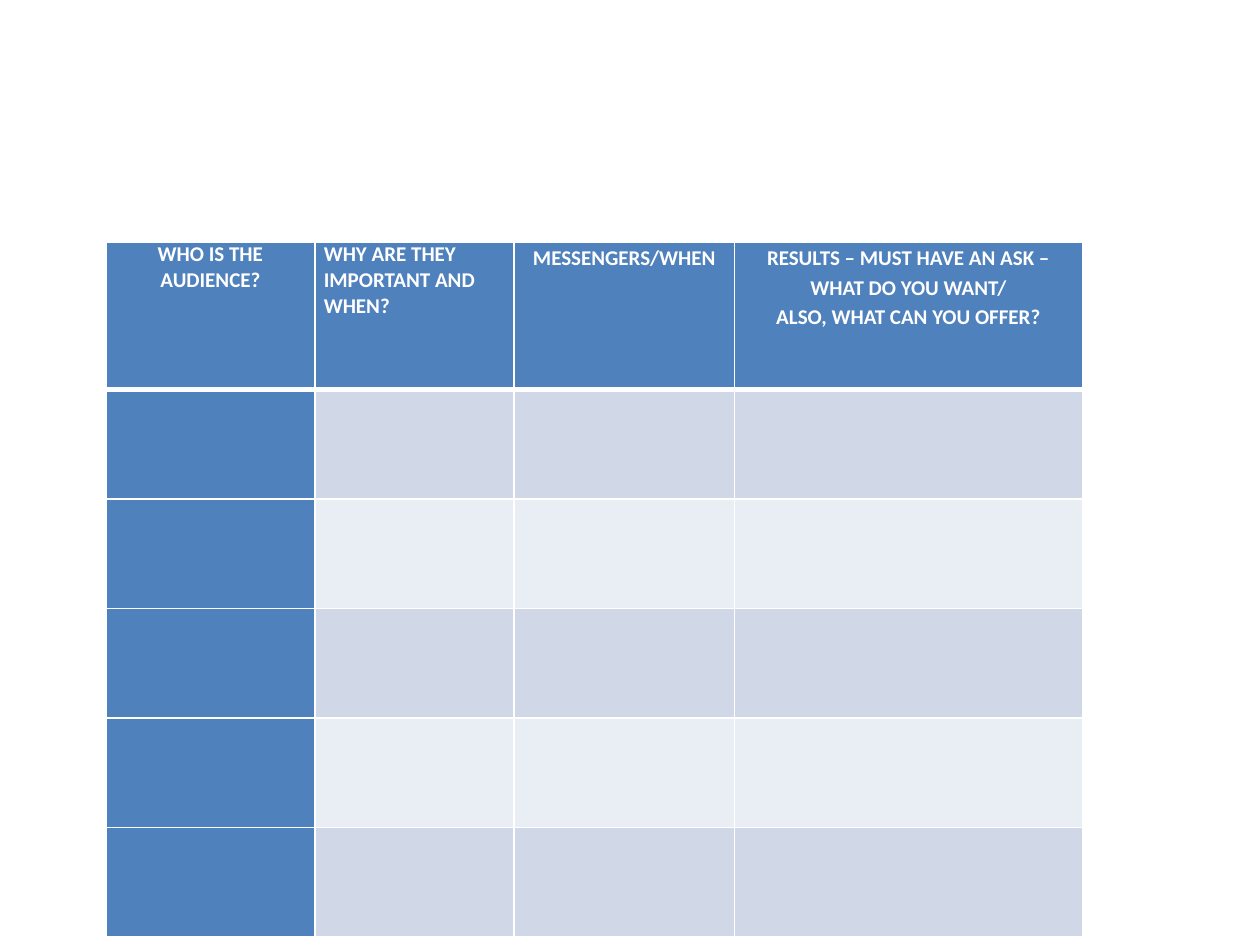
from dataclasses import dataclass

from pptx import Presentation
from pptx.dml.color import RGBColor
from pptx.enum.text import PP_ALIGN
from pptx.oxml.ns import qn
from pptx.util import Inches, Pt
from lxml.etree import SubElement


@dataclass
class Theme:
    font: str = "Calibri"
    size: int = 12
    head: str = "4F81BD"
    bands: tuple = ("D0D8E8", "E9EDF4")
    white: str = "FFFFFF"
    thin: int = 1
    thick: int = 3


class Board:
    def __init__(self, theme, slide):
        self.theme = theme
        self.slide = slide

    def table(self, left, top, cols, rows):
        frame = self.slide.shapes.add_table(
            len(rows), len(cols), Inches(left), Inches(top),
            Inches(sum(cols)), Inches(sum(rows)))
        grid = frame.table
        for col, width in zip(grid.columns, cols):
            col.width = Inches(width)
        for row, height in zip(grid.rows, rows):
            row.height = Inches(height)
        return grid

    def paint(self, cell, color, base):
        """Fill a cell and rule its four sides; base is the lower width."""
        cell.fill.solid()
        cell.fill.fore_color.rgb = RGBColor.from_string(color)
        props = cell._tc.get_or_add_tcPr()
        for spot, side in enumerate("LRTB"):
            width = base if side == "B" else self.theme.thin
            line = SubElement(props, qn(f"a:ln{side}"), w=str(Pt(width)))
            fill = SubElement(line, qn("a:solidFill"))
            SubElement(fill, qn("a:srgbClr"), val=self.theme.white)
            props.insert(spot, line)

    def label(self, cell, text, align, space):
        cell.margin_left = cell.margin_right = Inches(0.07)
        cell.margin_top = cell.margin_bottom = 0
        cell.text_frame.text = text
        for para in cell.text_frame.paragraphs:
            para.alignment = align
            para.line_spacing = space
            for run in para.runs:
                font = run.font
                font.name = self.theme.font
                font.size = Pt(self.theme.size)
                font.bold = True
                font.color.rgb = RGBColor.from_string(self.theme.white)


HEADS = [
    ("WHO IS THE AUDIENCE?", PP_ALIGN.CENTER, 1.0),
    ("WHY ARE THEY IMPORTANT AND WHEN?", PP_ALIGN.LEFT, 1.0),
    ("MESSENGERS/WHEN", PP_ALIGN.CENTER, 1.15),
    ("RESULTS – MUST HAVE AN ASK – WHAT DO YOU WANT/\n"
     "ALSO, WHAT CAN YOU OFFER?", PP_ALIGN.CENTER, 1.15),
]


def main():
    deck = Presentation()
    deck.slide_width, deck.slide_height = Inches(10), Inches(7.5)
    theme = Theme()
    board = Board(theme, deck.slides.add_slide(deck.slide_layouts[6]))

    # Audience planning grid
    rows = [1.17] + [0.87] * 5
    grid = board.table(0.84, 1.92, [1.66, 1.58, 1.75, 2.76], rows)

    # Header row and first column are solid, the rest is banded
    for r in range(len(rows)):
        for c in range(len(HEADS)):
            edge = r == 0 or c == 0
            color = theme.head if edge else theme.bands[(r - 1) % 2]
            base = theme.thick if r == 0 else theme.thin
            board.paint(grid.cell(r, c), color, base)

    # Column headings
    for c, (text, align, space) in enumerate(HEADS):
        board.label(grid.cell(0, c), text, align, space)

    deck.save("out.pptx")


if __name__ == "__main__":
    main()
